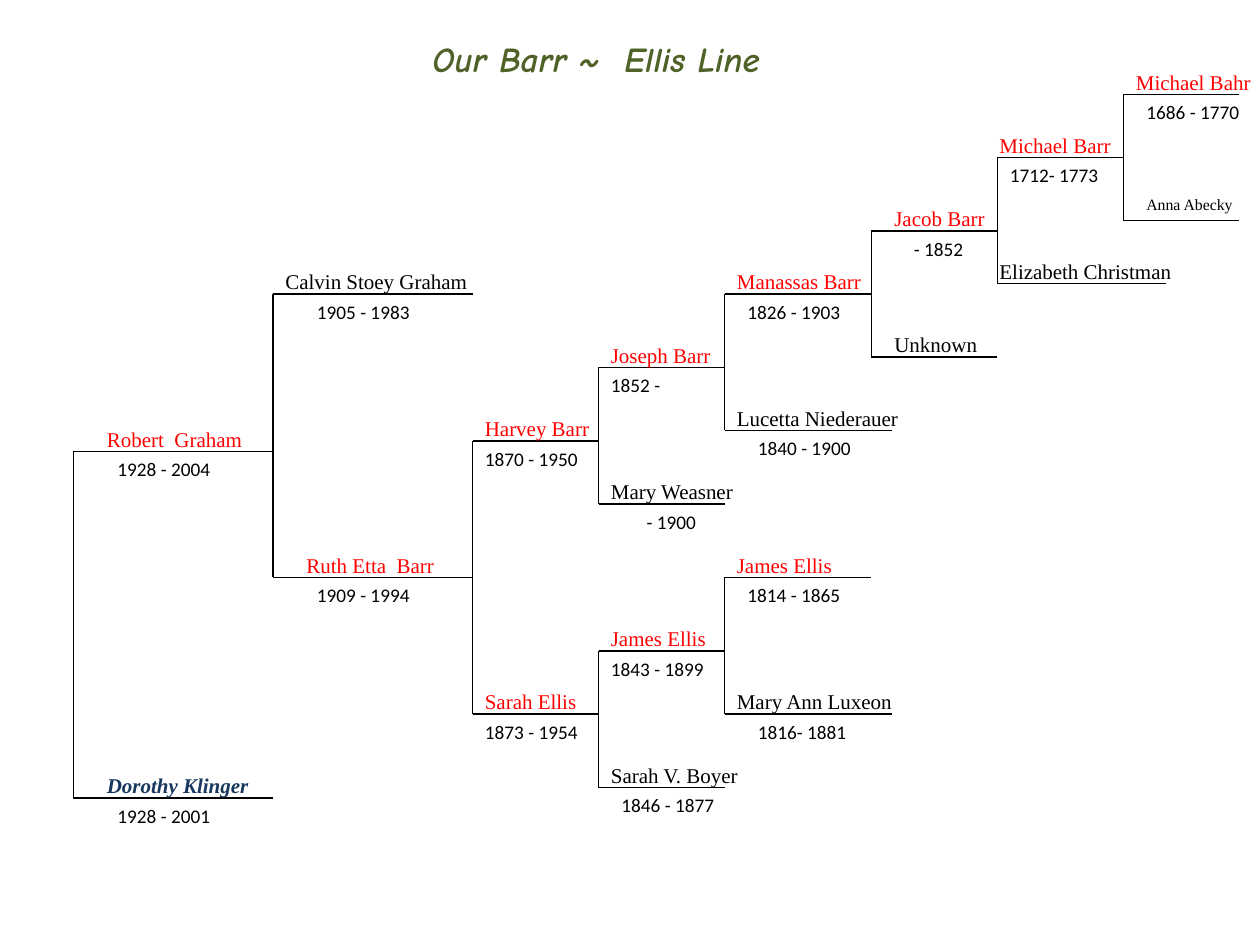
from dataclasses import dataclass

from lxml.etree import SubElement
from pptx import Presentation
from pptx.dml.color import RGBColor
from pptx.enum.shapes import MSO_CONNECTOR
from pptx.enum.text import MSO_AUTO_SIZE
from pptx.oxml.ns import qn
from pptx.util import Inches, Pt

RED = RGBColor(0xFF, 0x00, 0x00)
BLACK = RGBColor(0x00, 0x00, 0x00)
NAVY = RGBColor(0x17, 0x37, 0x5E)
GREEN = RGBColor(0x4F, 0x62, 0x28)

# The grid has twelve units to the inch; a generation runs between two columns.
COLUMNS = (7, 26, 45, 57, 69, 83, 95, 107, 118)
NAME_HEIGHT, DATES_WIDTH, DATES_HEIGHT = 3.6, 12, 3.5


@dataclass
class Person:
    name: str
    row: int                # grid row of the line under the name
    width: float            # width of the name box
    dates: str = ""
    color: RGBColor = RED
    name_shift: float = 0   # offsets from the generation's column
    dates_shift: float = 0
    overhang: int = 0       # line length past the next column
    size: int = 12
    slanted: bool = False


# Each couple: generation, father, mother
COUPLES = (
    (0, Person("Robert  Graham", 43, 20, "1928 - 2004", RED, 2, 3),
     Person("Dorothy Klinger", 76, 17, "1928 - 2001", NAVY, 2, 3, slanted=True)),
    (1, Person("Calvin Stoey Graham", 28, 21, "1905 - 1983", BLACK, 0, 3),
     Person("Ruth Etta  Barr", 55, 15, "1909 - 1994", RED, 2, 3)),
    (2, Person("Harvey Barr", 42, 13, "1870 - 1950"),
     Person("Sarah Ellis", 68, 13, "1873 - 1954")),
    (3, Person("Joseph Barr", 35, 13, "1852 -"),
     Person("Mary Weasner", 48, 16, "- 1900", BLACK, 0, 3.4)),
    (3, Person("James Ellis", 62, 13, "1843 - 1899"),
     Person("Sarah V. Boyer", 75, 16, "1846 - 1877", BLACK, 0, 1)),
    (4, Person("Manassas Barr", 28, 16, "1826 - 1903", RED, 0, 1),
     Person("Lucetta Niederauer", 41, 19, "1840 - 1900", BLACK, 0, 2, 2)),
    (4, Person("James Ellis", 55, 13, "1814 - 1865", RED, 0, 1),
     Person("Mary Ann Luxeon", 68, 19, "1816- 1881", BLACK, 0, 2, 2)),
    (5, Person("Jacob Barr", 22, 13, "- 1852", RED, 1, 2.85),
     Person("Unknown", 34, 11, "", BLACK, 1)),
    (6, Person("Michael Barr", 15, 14, "1712- 1773", RED, -1),
     Person("Elizabeth Christman", 27, 20, "", BLACK, -1, 0, 4)),
    (7, Person("Michael Bahr", 9, 15, "1686 - 1770", RED, 0, 1),
     Person("Anna Abecky", 21, 12, "", BLACK, 1, size=9)),
)


def grid(units):
    return Inches(units / 12)


def add_line(page, left, top, right, bottom):
    line = page.shapes.add_connector(
        MSO_CONNECTOR.STRAIGHT, grid(left), grid(top), grid(right), grid(bottom))
    line.line.color.rgb = BLACK
    line.line.width = Pt(0.75)
    SubElement(line._element.spPr, qn("a:effectLst"))


def add_text(page, text, left, top, width, height, font, size, color,
             slanted=False, wrap=True):
    box = page.shapes.add_textbox(grid(left), grid(top), grid(width), grid(height))
    frame = box.text_frame
    frame.word_wrap = wrap
    frame.auto_size = MSO_AUTO_SIZE.SHAPE_TO_FIT_TEXT
    frame.text = text
    span = frame.paragraphs[0].runs[0]
    span.font.name = font
    span.font.size = Pt(size)
    span.font.color.rgb = color
    if slanted:
        span.font.bold = span.font.italic = True


def add_person(page, person, generation):
    left, right = COLUMNS[generation:generation + 2]
    add_line(page, left, person.row, right + person.overhang, person.row)
    height = NAME_HEIGHT * (person.size + 3) / 15
    add_text(page, person.name, left + person.name_shift, person.row - 3,
             person.width, height, "Times New Roman", person.size,
             person.color, person.slanted)
    if person.dates:
        add_text(page, person.dates, left + person.dates_shift, person.row,
                 DATES_WIDTH, DATES_HEIGHT, "Calibri", 11, BLACK)


def add_couple(page, generation, father, mother):
    column = COLUMNS[generation]
    add_line(page, column, father.row, column, mother.row)
    for person in (father, mother):
        add_person(page, person, generation)


def main():
    deck = Presentation()
    deck.slide_width, deck.slide_height = Inches(10), Inches(7.5)
    page = deck.slides.add_slide(deck.slide_layouts[6])

    # Title
    add_text(page, "Our Barr ~  Ellis Line", 40, 3, 34.4, 5.3,
             "Comic Neue", 20, GREEN, slanted=True, wrap=False)

    # Family tree
    for couple in COUPLES:
        add_couple(page, *couple)

    deck.save("out.pptx")


if __name__ == "__main__":
    main()
